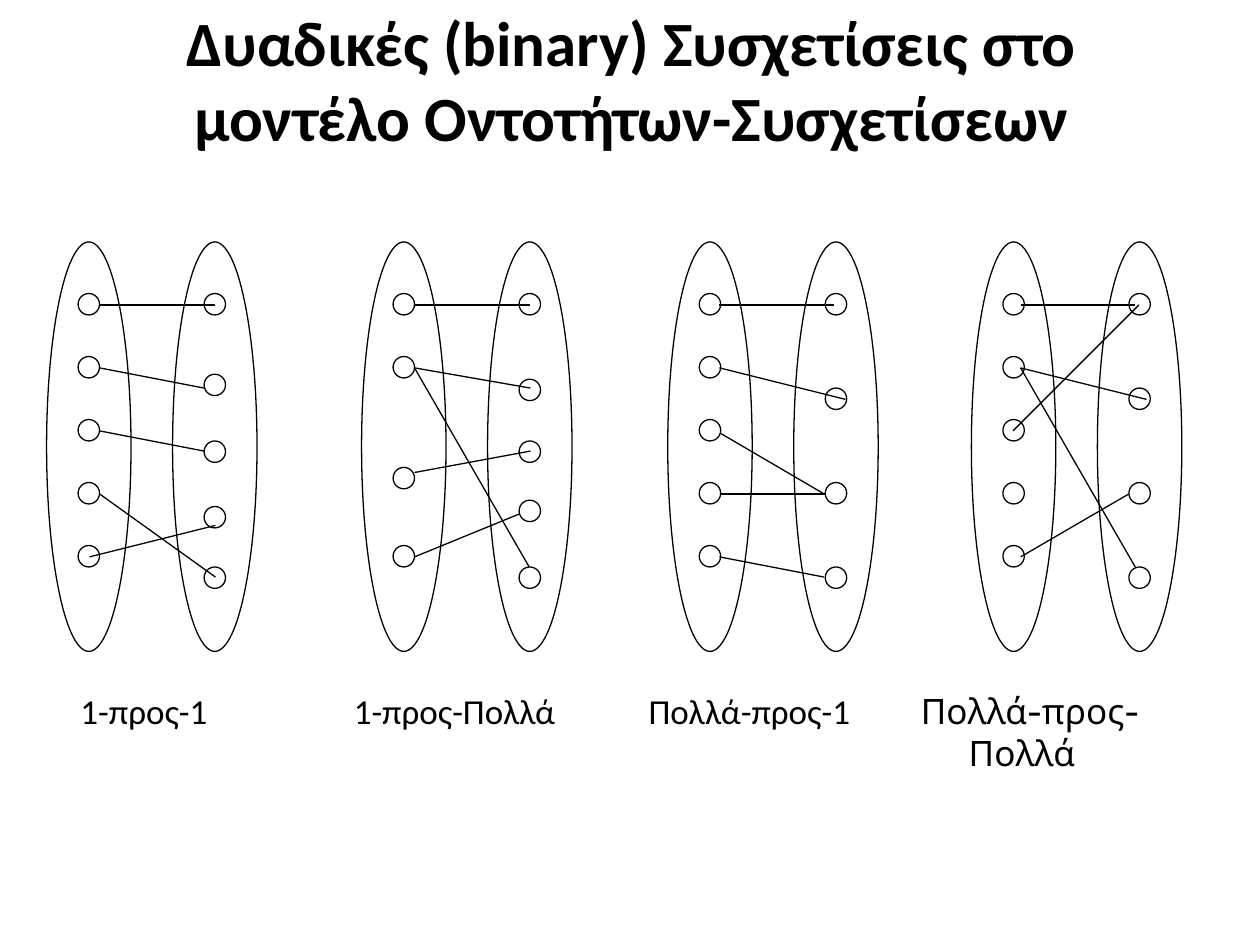
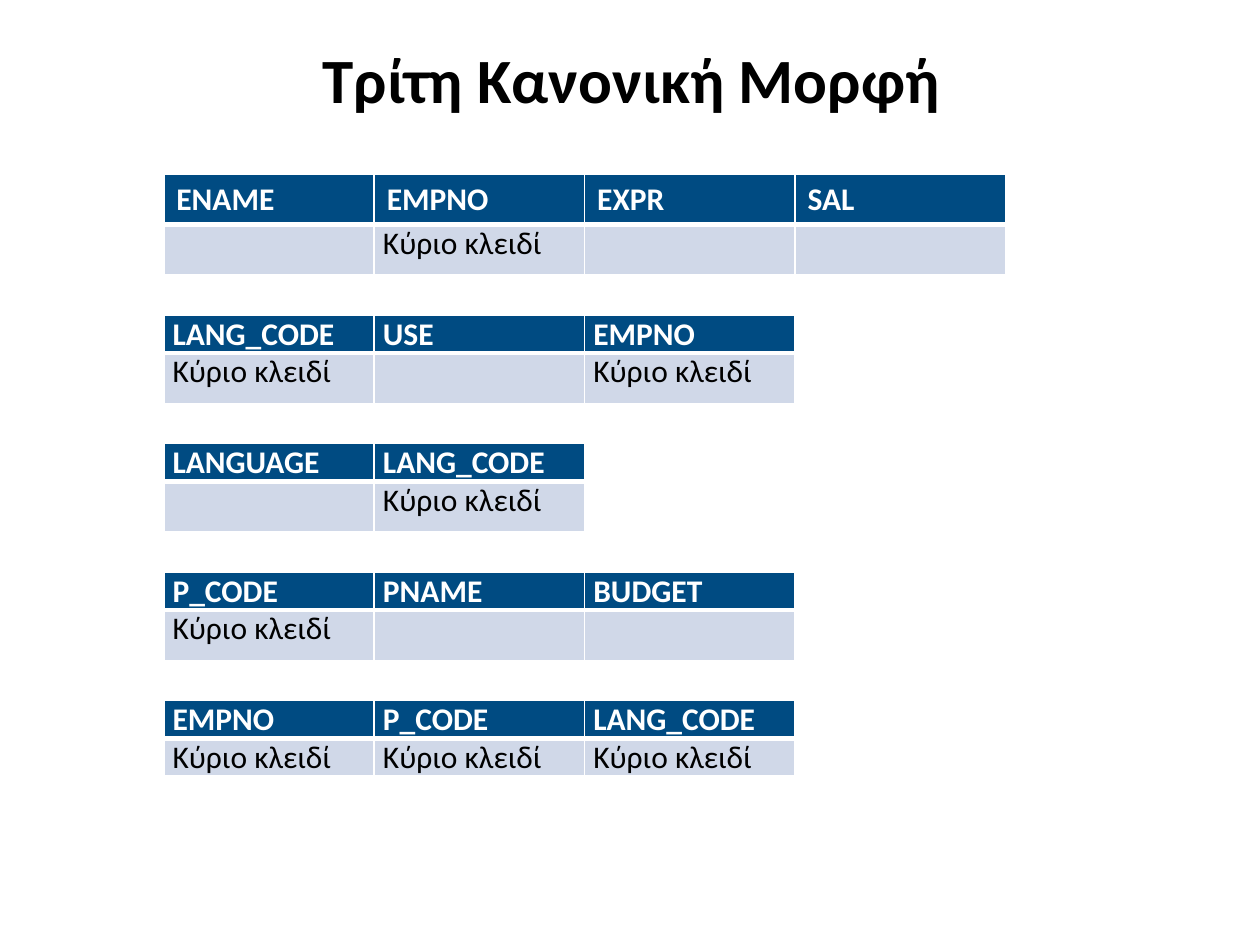
from dataclasses import dataclass
from lxml.etree import SubElement
from pptx import Presentation
from pptx.dml.color import RGBColor
from pptx.enum.shapes import MSO_CONNECTOR, MSO_SHAPE
from pptx.enum.text import MSO_ANCHOR, PP_ALIGN
from pptx.oxml.ns import qn
from pptx.util import Inches, Pt


@dataclass(frozen=True)
class Theme:
    """Colours, fonts and sizes shared by the slides."""
    ink: str = "000000"
    paper: str = "FFFFFF"
    header: str = "004B82"
    body: str = "D0D8E8"
    font: str = "Calibri"
    alt_font: str = "Cabin"
    title_size: int = 36
    caption_size: int = 20
    cell_size: int = 18
    thin: float = 0.75
    grid: int = 1
    rule: int = 3


def set_all(target, values):
    """Set each attribute of the target from a dict."""
    for name, value in values.items():
        setattr(target, name, value)


class Deck:
    """Holds the theme and the current slide, and draws its elements."""

    def __init__(self, theme):
        """Start a 10 by 7.5 inch presentation."""
        self.theme = theme
        self.prs = Presentation()
        set_all(self.prs, {"slide_width": Inches(10), "slide_height": Inches(7.5)})

    def slide(self, title):
        """Add a blank slide with the shared title."""
        self.s = self.prs.slides.add_slide(self.prs.slide_layouts[6])
        tf = self.box(0.51, 0.13, 9, 0.99)
        tf.vertical_anchor = MSO_ANCHOR.MIDDLE
        self.label(tf, title, self.theme.title_size, bold=True, align=PP_ALIGN.CENTER)

    def box(self, x, y, w, h):
        """Add a wrapping text box and return its text frame."""
        tf = self.s.shapes.add_textbox(*map(Inches, (x, y, w, h))).text_frame
        tf.word_wrap = True
        return tf

    def label(self, tf, text, size, color=None, font=None, bold=False, align=PP_ALIGN.LEFT):
        """Put one formatted paragraph in a text frame."""
        p = tf.paragraphs[0]
        p.alignment = align
        r = p.add_run()
        r.text = text
        set_all(r.font, {"size": Pt(size), "bold": bold, "name": font or self.theme.font})
        r.font.color.rgb = RGBColor.from_string(color or self.theme.ink)
        return p

    def caption(self, text, x, w, font=None):
        """Add a caption with a hanging indent."""
        p = self.label(self.box(x, 5.42, w, 0.5), text, self.theme.caption_size, font=font)
        pPr = p._p.get_or_add_pPr()
        pPr.set("marL", str(Inches(0.38)))
        pPr.set("indent", str(-Inches(0.38)))

    def outline(self, shape):
        """Give a shape or connector the thin line."""
        shape.line.color.rgb = RGBColor.from_string(self.theme.ink)
        shape.line.width = Pt(self.theme.thin)

    def ellipse(self, shapes, x, y, w, h, fill=None):
        """Add an outlined ellipse, hollow unless filled."""
        sp = shapes.add_shape(MSO_SHAPE.OVAL, *map(Inches, (x, y, w, h)))
        sp.shadow.inherit = False
        if fill:
            sp.fill.solid()
            sp.fill.fore_color.rgb = RGBColor.from_string(fill)
        else:
            sp.fill.background()
        self.outline(sp)

    def link(self, shapes, x1, y1, x2, y2):
        """Add a straight line without a shadow."""
        c = shapes.add_connector(MSO_CONNECTOR.STRAIGHT, *map(Inches, (x1, y1, x2, y2)))
        self.outline(c)
        SubElement(c._element.spPr, qn("a:effectLst"))

    def mapping(self, x, left_dots, right_dots, links):
        """Draw two sets, their members and the links between them."""
        shapes = self.s.shapes.add_group_shape().shapes
        for set_x, dots in ((x, left_dots), (x + 1, right_dots)):
            self.ellipse(shapes, set_x, 1.92, 0.67, 3.25)
            for y in dots:
                self.ellipse(shapes, set_x + 0.25, y, 0.17, 0.17, self.theme.paper)
        for x1, y1, x2, y2 in links:
            self.link(shapes, x + x1, y1, x + x2, y2)

    def borders(self, cell, widths):
        """Draw white cell borders of the given widths."""
        tcPr = cell._tc.get_or_add_tcPr()
        for index, (side, width) in enumerate(widths.items()):
            ln = SubElement(tcPr, qn(f"a:ln{side}"), w=str(Pt(width)))
            tcPr.remove(ln)
            tcPr.insert(index, ln)
            SubElement(SubElement(ln, qn("a:solidFill")), qn("a:srgbClr"), val=self.theme.paper)

    def cell(self, cell, text, header, roomy):
        """Fill, border and label one table cell."""
        t = self.theme
        cell.fill.solid()
        cell.fill.fore_color.rgb = RGBColor.from_string(t.header if header else t.body)
        self.borders(cell, {"L": t.grid, "R": t.grid, "T": t.grid if header else t.rule,
                            "B": t.rule if header else t.grid})
        if not text:
            cell.text_frame.paragraphs[0].font.size = Pt(t.cell_size)
            return
        if not roomy:
            set_all(cell, {"margin_left": Inches(0.07), "margin_right": Inches(0.07),
                           "margin_top": 0, "margin_bottom": 0})
        self.label(cell.text_frame, text, t.cell_size, t.paper if header else t.ink,
                   bold=header, align=PP_ALIGN.LEFT if roomy else PP_ALIGN.JUSTIFY)

    def relation(self, y, columns, keys, heights):
        """Add a relation as a table with its key columns marked."""
        width = 1.67
        frame = self.s.shapes.add_table(2, len(columns), Inches(1.3), Inches(y),
                                        Inches(width * len(columns)), Inches(sum(heights)))
        table = frame.table
        for row, height in zip(table.rows, heights):
            row.height = Inches(height)
        for i, name in enumerate(columns):
            table.columns[i].width = Inches(width)
            self.cell(table.cell(0, i), name, True, heights[0] > 0.3)
            self.cell(table.cell(1, i), "Κύριο κλειδί" if name in keys else "", False, False)


FIVE_DOTS = (2.33, 2.83, 3.33, 3.83, 4.33)
FOUR_DOTS = (2.33, 3.08, 3.83, 4.5)

MAPPINGS = (
    (0.37, FIVE_DOTS, (2.33, 2.97, 3.5, 4.02, 4.5),
     ((0.42, 2.42, 1.34, 2.42), (0.42, 2.92, 1.25, 3.08), (0.42, 3.42, 1.25, 3.58),
      (0.34, 4.42, 1.34, 4.17), (0.42, 3.92, 1.34, 4.58))),
    (2.87, (2.33, 2.83, 3.71, 4.33), (2.33, 3.01, 3.5, 3.97, 4.5),
     ((0.42, 2.42, 1.34, 2.42), (0.42, 2.92, 1.34, 3.08), (0.42, 4.42, 1.25, 4.08),
      (0.42, 2.92, 1.33, 4.5), (0.42, 3.75, 1.34, 3.58))),
    (5.3, FIVE_DOTS, FOUR_DOTS,
     ((0.41, 2.42, 1.32, 2.42), (0.41, 2.92, 1.41, 3.17), (0.41, 4.42, 1.24, 4.58),
      (0.42, 3.92, 1.25, 3.92), (0.42, 3.44, 1.24, 3.92))),
    (7.71, FIVE_DOTS, FOUR_DOTS,
     ((0.39, 2.42, 1.3, 2.42), (0.39, 2.92, 1.39, 3.17), (0.39, 4.42, 1.25, 3.92),
      (0.39, 2.92, 1.3, 4.5), (1.33, 2.42, 0.33, 3.42))),
)

RELATIONS = (
    (("ENAME", "EMPNO", "EXPR", "SAL"), ("EMPNO",), (0.4, 0.4)),
    (("LANG_CODE", "USE", "EMPNO"), ("LANG_CODE", "EMPNO"), (0.3, 0.4)),
    (("LANGUAGE", "LANG_CODE"), ("LANG_CODE",), (0.3, 0.4)),
    (("P_CODE", "PNAME", "BUDGET"), ("P_CODE",), (0.3, 0.4)),
    (("EMPNO", "P_CODE", "LANG_CODE"), ("EMPNO", "P_CODE", "LANG_CODE"), (0.3, 0.3)),
)


def main():
    """Build both slides and save them."""
    deck = Deck(Theme())
    deck.slide("Δυαδικές (binary) Συσχετίσεις στο μοντέλο Οντοτήτων-Συσχετίσεων")
    for mapping in MAPPINGS:
        deck.mapping(*mapping)
    deck.caption("1-προς-1", 0.54, 1.42)
    deck.caption("1-προς-Πολλά", 2.71, 2)
    deck.caption("Πολλά-προς-1", 5.05, 2)
    deck.caption("Πολλά-προς-Πολλά", 7.21, 2.58, deck.theme.alt_font)

    deck.slide("Τρίτη Κανονική Μορφή")
    y = 1.38
    for columns, keys, heights in RELATIONS:
        deck.relation(y, columns, keys, heights)
        y += sum(heights) + 0.32
    deck.prs.save("out.pptx")


if __name__ == "__main__":
    main()
